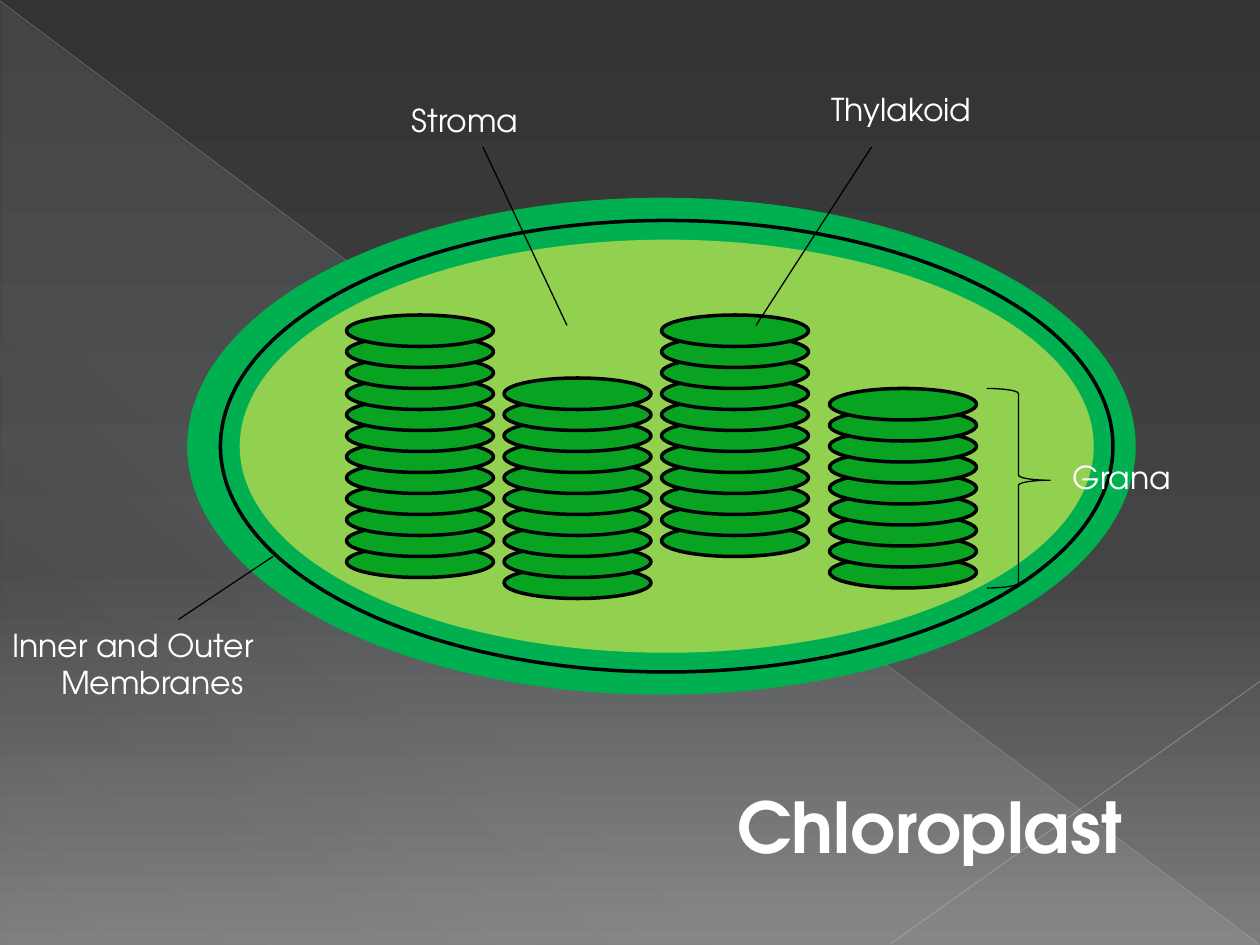
"""Build a slide with a labelled diagram of a chloroplast."""
from typing import NamedTuple

from lxml import etree
from pptx import Presentation
from pptx.dml.color import RGBColor
from pptx.enum.shapes import MSO_CONNECTOR, MSO_SHAPE
from pptx.enum.text import MSO_ANCHOR, MSO_AUTO_SIZE, PP_ALIGN
from pptx.oxml.ns import qn
from pptx.util import Pt

PX = 7620
FONT = "TeX Gyre Adventor"
OVAL, BRACE, WEDGE = MSO_SHAPE.OVAL, MSO_SHAPE.RIGHT_BRACE, MSO_SHAPE.RIGHT_TRIANGLE
LINE = MSO_CONNECTOR.STRAIGHT
LEFT, CENTER = PP_ALIGN.LEFT, PP_ALIGN.CENTER
TOP = MSO_ANCHOR.TOP
GROW, FIXED = MSO_AUTO_SIZE.SHAPE_TO_FIT_TEXT, MSO_AUTO_SIZE.NONE

BLACK = RGBColor(0x00, 0x00, 0x00)
WHITE = RGBColor(0xFF, 0xFF, 0xFF)
DARK = RGBColor(0x33, 0x33, 0x33)
SLATE = RGBColor(0x44, 0x44, 0x44)
GRAY = RGBColor(0x7D, 0x7D, 0x7D)
ICE = RGBColor(0xDE, 0xF5, 0xFA)
SILVER = RGBColor(0xB9, 0xB9, 0xB9)
PALE = RGBColor(0xC1, 0xC1, 0xC1)
GREEN = RGBColor(0x00, 0xB0, 0x50)
LIME = RGBColor(0x92, 0xD0, 0x50)
LEAF = RGBColor(0x07, 0xA3, 0x21)


class Box(NamedTuple):
    left: int
    top: int
    width: int
    height: int

    def emu(self) -> list[int]:
        return [side * PX for side in self]


class Stop(NamedTuple):
    place: int
    color: RGBColor
    alpha: int = 100


class Oval(NamedTuple):
    box: Box
    fill: RGBColor
    edge: RGBColor


class Stack(NamedTuple):
    left: int
    top: int
    count: int


class Stroke(NamedTuple):
    start: tuple[int, int]
    end: tuple[int, int]
    color: RGBColor = BLACK
    width: float = 0.75
    alpha: int = 100


class Label(NamedTuple):
    box: Box
    lines: list[tuple[str, PP_ALIGN]]


DISC_WIDTH, DISC_HEIGHT, DISC_STEP = 140, 30, 20
SKY = [Stop(0, DARK), Stop(60, SLATE), Stop(100, GRAY)]
GLOW = [Stop(0, ICE, 10), Stop(70, ICE, 8), Stop(100, ICE, 1)]
RAYS = [
    Stroke((0, 1), (1199, 899), SILVER, 0.39, 35),
    Stroke((1200, 649), (848, 899), PALE, 0.47, 45),
]
LAYERS = [
    Oval(Box(180, 190, 900, 470), GREEN, GREEN),
    Oval(Box(210, 210, 850, 430), GREEN, BLACK),
    Oval(Box(230, 230, 810, 390), LIME, LIME),
]
STACKS = [
    Stack(330, 300, 12),
    Stack(480, 360, 10),
    Stack(630, 300, 11),
    Stack(790, 370, 9),
]
LEADERS = [
    Stroke((720, 310), (830, 140)),
    Stroke((540, 310), (460, 140)),
    Stroke((260, 530), (170, 590)),
]
LABELS = [
    Label(Box(1010, 430, 150, 48), [("Grana", LEFT)]),
    Label(Box(780, 80, 180, 48), [("Thylakoid", LEFT)]),
    Label(Box(380, 90, 130, 50), [("Stroma", LEFT)]),
    Label(Box(0, 590, 290, 85), [("Inner and Outer", LEFT), ("Membranes", CENTER)]),
]


def fade(color, alpha: int) -> None:
    if alpha < 100:
        etree.SubElement(color, qn("a:alpha"), val=str(alpha * 1000))


def blend(fill, owner, stops: list[Stop], angle: int) -> None:
    fill.gradient()
    fill.gradient_angle = 360 - angle
    ramp = next(owner.iter(qn("a:gsLst")))
    for old in list(ramp):
        ramp.remove(old)
    for stop in stops:
        point = etree.SubElement(ramp, qn("a:gs"), pos=str(stop.place * 1000))
        fade(etree.SubElement(point, qn("a:srgbClr"), val=str(stop.color)), stop.alpha)


def draw_wedge(shapes, box: Box) -> None:
    wedge = shapes.add_shape(WEDGE, *box.emu())
    wedge.shadow.inherit = False
    wedge.line.fill.background()
    blend(wedge.fill, wedge.element, GLOW, 133)


def draw_stroke(shapes, stroke: Stroke) -> None:
    ends = [side * PX for side in (*stroke.start, *stroke.end)]
    line = shapes.add_connector(LINE, *ends)
    line.line.color.rgb = stroke.color
    line.line.width = Pt(stroke.width)
    fade(next(line.element.iter(qn("a:srgbClr"))), stroke.alpha)
    etree.SubElement(line.element.spPr, qn("a:effectLst"))


def draw_oval(shapes, oval: Oval) -> None:
    shape = shapes.add_shape(OVAL, *oval.box.emu())
    shape.shadow.inherit = False
    shape.fill.solid()
    shape.fill.fore_color.rgb = oval.fill
    shape.line.color.rgb = oval.edge
    shape.line.width = Pt(2)


def draw_stack(shapes, stack: Stack) -> None:
    for row in reversed(range(stack.count)):
        box = Box(stack.left, stack.top + row * DISC_STEP, DISC_WIDTH, DISC_HEIGHT)
        draw_oval(shapes, Oval(box, LEAF, BLACK))


def draw_brace(shapes, box: Box) -> None:
    brace = shapes.add_shape(BRACE, *box.emu())
    brace.shadow.inherit = False
    brace.fill.background()
    brace.line.color.rgb = BLACK
    brace.line.width = Pt(0.75)
    brace.adjustments[0] = 0.08
    brace.adjustments[1] = 0.46


def style(para, align: PP_ALIGN, size: int, bold: bool = False) -> None:
    para.alignment = align
    para.font.name = FONT
    para.font.size = Pt(size)
    para.font.bold = bold
    para.font.color.rgb = WHITE


def draw_label(shapes, label: Label) -> None:
    frame = shapes.add_textbox(*label.box.emu()).text_frame
    frame.word_wrap = True
    frame.auto_size = GROW
    frame.text = "\n".join(text for text, _ in label.lines)
    for para, (_, align) in zip(frame.paragraphs, label.lines):
        style(para, align, 18)


def place_title(title, text: str, box: Box) -> None:
    title.left, title.top, title.width, title.height = box.emu()
    frame = title.text_frame
    frame.text = text
    frame.word_wrap = True
    frame.auto_size = FIXED
    frame.vertical_anchor = TOP
    style(frame.paragraphs[0], LEFT, 40, True)
    title.element.getparent().append(title.element)


def main() -> None:
    deck = Presentation()
    deck.slide_width, deck.slide_height = 1200 * PX, 900 * PX
    slide = deck.slides.add_slide(deck.slide_layouts[5])
    shapes = slide.shapes
    blend(slide.background.fill, slide.element, SKY, 90)
    draw_wedge(shapes, Box(1, 2, 1199, 898))
    for ray in RAYS:
        draw_stroke(shapes, ray)
    cell = shapes.add_group_shape().shapes
    for layer in LAYERS:
        draw_oval(cell, layer)
    for stack in STACKS:
        draw_stack(cell, stack)
    draw_brace(shapes, Box(940, 370, 60, 190))
    for leader in LEADERS:
        draw_stroke(shapes, leader)
    for label in LABELS:
        draw_label(shapes, label)
    place_title(shapes.title, "Chloroplast", Box(690, 740, 510, 92))
    deck.save("out.pptx")


if __name__ == "__main__":
    main()
